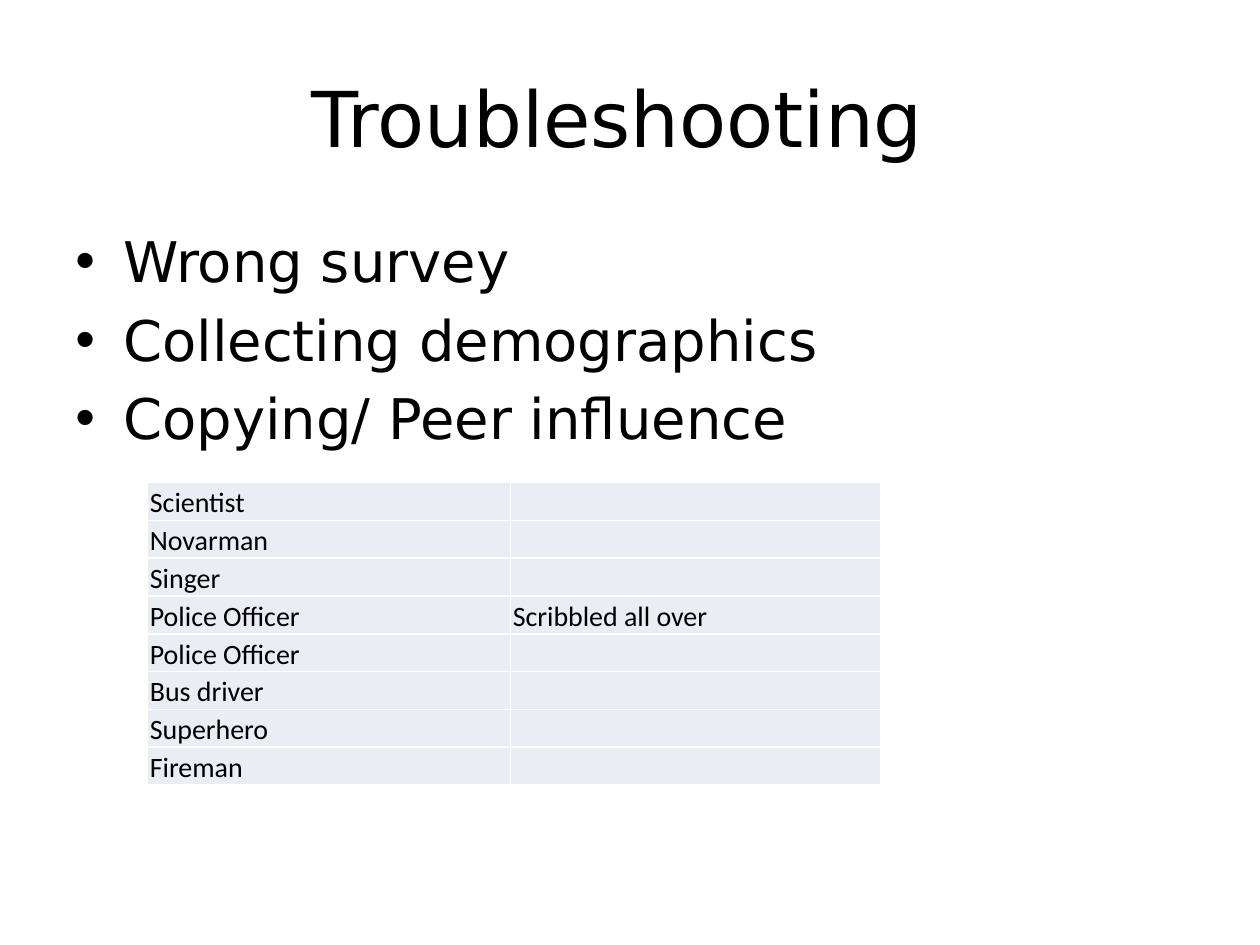
"""Build the Troubleshooting slide: title, bullet list and answer table."""
from dataclasses import dataclass

from lxml import etree
from pptx import Presentation
from pptx.dml.color import RGBColor
from pptx.enum.text import MSO_ANCHOR, PP_ALIGN
from pptx.oxml.ns import qn
from pptx.util import Inches, Pt

MIDDLE, TOP, BOTTOM = MSO_ANCHOR.MIDDLE, MSO_ANCHOR.TOP, MSO_ANCHOR.BOTTOM
CENTER, LEFT = PP_ALIGN.CENTER, PP_ALIGN.LEFT
WIDTH, HEIGHT = Inches(10), Inches(7.5)
BLACK, WHITE, CELL_FILL = "000000", "FFFFFF", "E9EDF4"
COLUMN_WIDTHS = (2.88, 2.94)
ROW_HEIGHT = 0.3
CELL_SIZE = 16
BULLET_INDENT = Inches(0.38)


@dataclass
class TextBlock:
    """Text with its place as shares of the slide."""
    lines: tuple[str, ...]
    left: float
    top: float
    width: float
    height: float
    size: int
    anchor: MSO_ANCHOR
    align: PP_ALIGN
    bulleted: bool = False


BLOCKS = (
    TextBlock(("Troubleshooting ",), 0.05, 0.04, 0.9, 1.25 / 7.5, 44, MIDDLE, CENTER),
    TextBlock(("Wrong survey", "Collecting demographics", "Copying/ Peer influence"),
              0.05, 1.75 / 7.5, 0.9, 0.66, 32, TOP, LEFT, True),
)
ANSWERS = (
    ("Scientist", ""),
    ("Novarman", ""),
    ("Singer", ""),
    ("Police Officer", "Scribbled all over"),
    ("Police Officer", ""),
    ("Bus driver", ""),
    ("Superhero", ""),
    ("Fireman", ""),
)


def color(value: str) -> RGBColor:
    """Turn a hex string into a colour."""
    return RGBColor.from_string(value)


def set_values(target, values: dict) -> None:
    """Set each named attribute on the target."""
    for name, value in values.items():
        setattr(target, name, value)


def write(para, text: str, font: str, size: int) -> None:
    """Add one black span to a paragraph."""
    span = para.add_run()
    span.text = text
    set_values(span.font, {"name": font, "size": Pt(size)})
    span.font.color.rgb = color(BLACK)


def add_bullet(para) -> None:
    """Give a paragraph a hanging round bullet."""
    para.space_before = Pt(6.4)
    properties = para._p.get_or_add_pPr()
    properties.set("marL", str(BULLET_INDENT))
    properties.set("indent", str(-BULLET_INDENT))
    etree.SubElement(properties, qn("a:buFont"), typeface="Arial")
    etree.SubElement(properties, qn("a:buChar"), char="•")


def add_text(page, block: TextBlock) -> None:
    """Draw a text block."""
    box = page.shapes.add_textbox(int(block.left * WIDTH), int(block.top * HEIGHT),
                                  int(block.width * WIDTH), int(block.height * HEIGHT))
    frame = box.text_frame
    set_values(frame, {"word_wrap": True, "vertical_anchor": block.anchor})
    for index, line in enumerate(block.lines):
        para = frame.add_paragraph() if index else frame.paragraphs[0]
        para.alignment = block.align
        if block.bulleted:
            add_bullet(para)
        write(para, line, "DejaVu Sans", block.size)


def add_borders(cell) -> None:
    """Draw thin white lines on all sides of a cell."""
    properties = cell._tc.get_or_add_tcPr()
    for side in ("lnL", "lnR", "lnT", "lnB"):
        line = etree.SubElement(properties, qn(f"a:{side}"), w=str(Pt(1)))
        fill = etree.SubElement(line, qn("a:solidFill"))
        etree.SubElement(fill, qn("a:srgbClr"), val=WHITE)


def fill_cell(cell, text: str) -> None:
    """Format a table cell and write its text."""
    edge = Inches(0.02)
    set_values(cell, {"margin_left": edge, "margin_right": edge, "margin_top": edge,
                      "margin_bottom": 0, "vertical_anchor": BOTTOM})
    add_borders(cell)
    cell.fill.solid()
    cell.fill.fore_color.rgb = color(CELL_FILL)
    para = cell.text_frame.paragraphs[0]
    if text:
        write(para, text, "Calibri", CELL_SIZE)
    else:
        etree.SubElement(para._p, qn("a:endParaRPr"), sz=str(CELL_SIZE * 100))


def add_answers(page) -> None:
    """Draw the table of answers."""
    rows, columns = len(ANSWERS), len(COLUMN_WIDTHS)
    table = page.shapes.add_table(rows, columns, Inches(1.17), Inches(3.83),
                                  Inches(sum(COLUMN_WIDTHS)),
                                  Inches(rows * ROW_HEIGHT)).table
    set_values(table, {"first_row": False, "horz_banding": False})
    for column, width in zip(table.columns, COLUMN_WIDTHS):
        column.width = Inches(width)
    for row, answer in zip(table.rows, ANSWERS):
        row.height = Inches(ROW_HEIGHT)
        for cell, text in zip(row.cells, answer):
            fill_cell(cell, text)


def main() -> None:
    """Build and save the deck."""
    deck = Presentation()
    set_values(deck, {"slide_width": WIDTH, "slide_height": HEIGHT})
    page = deck.slides.add_slide(deck.slide_layouts[6])
    for block in BLOCKS:
        add_text(page, block)
    add_answers(page)
    deck.save("out.pptx")


if __name__ == "__main__":
    main()
